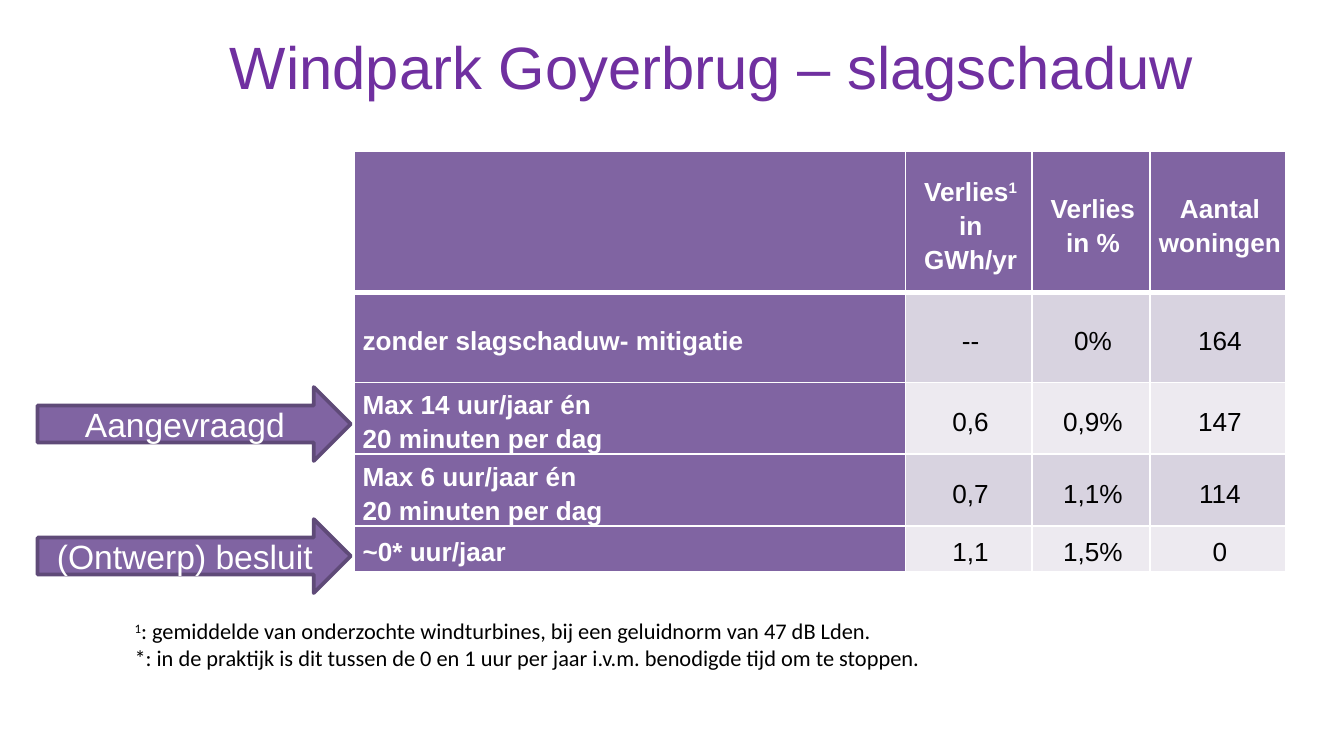
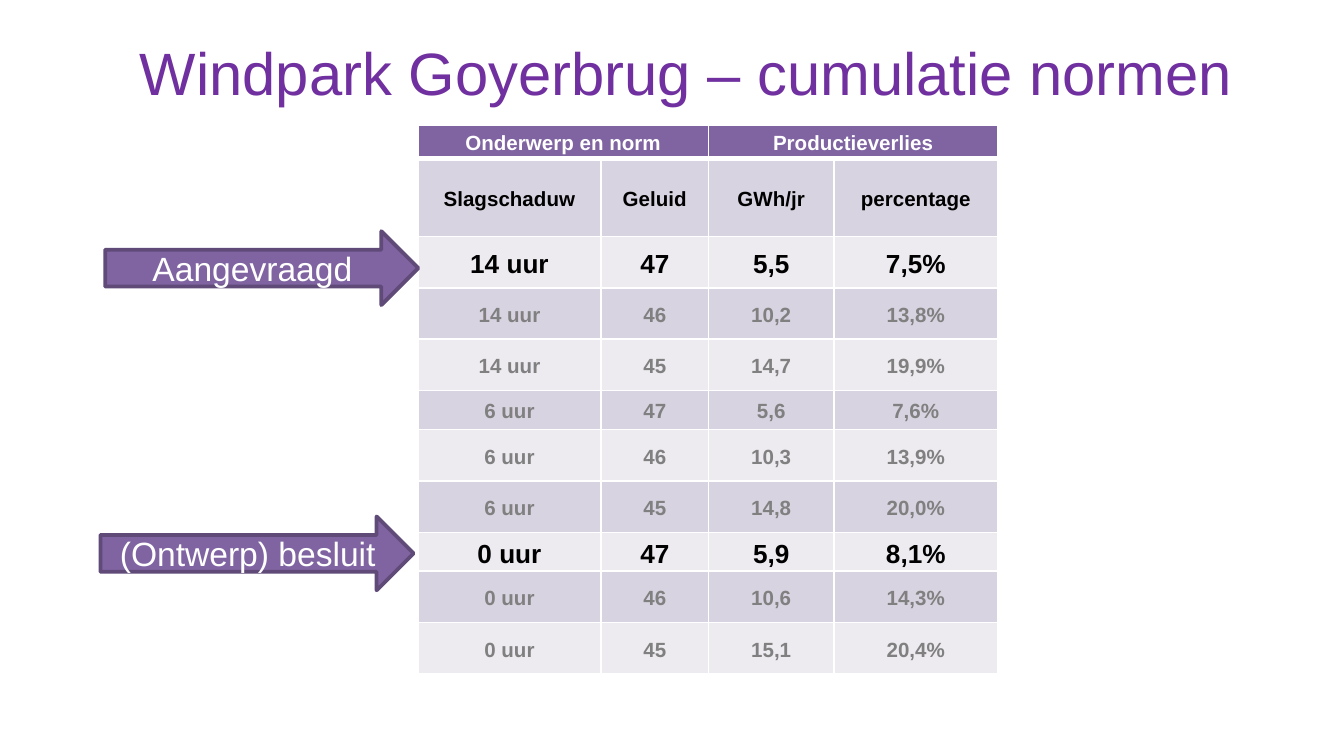
from lxml import etree
from pptx import Presentation
from pptx.dml.color import RGBColor
from pptx.enum.shapes import MSO_SHAPE
from pptx.enum.text import MSO_ANCHOR, MSO_AUTO_SIZE, PP_ALIGN
from pptx.oxml.ns import qn
from pptx.util import Pt

PX = 2286
ARROW = MSO_SHAPE.RIGHT_ARROW
MIDDLE = MSO_ANCHOR.MIDDLE
LEFT, CENTER = PP_ALIGN.LEFT, PP_ALIGN.CENTER
FIXED, GROW = MSO_AUTO_SIZE.NONE, MSO_AUTO_SIZE.SHAPE_TO_FIT_TEXT

TITLE = RGBColor(0x70, 0x30, 0xA0)
PURPLE = RGBColor(0x80, 0x64, 0xA2)
EDGE = RGBColor(0x5F, 0x4A, 0x78)
DARK = RGBColor(0xD8, 0xD3, 0xE0)
LIGHT = RGBColor(0xED, 0xEA, 0xF0)
WHITE = RGBColor(0xFF, 0xFF, 0xFF)
BLACK = RGBColor(0x00, 0x00, 0x00)
GRAY = RGBColor(0x80, 0x80, 0x80)


def write(par, text, size, color, bold=False, align=CENTER, face="Arial"):
    par.alignment = align
    for row, line in enumerate(text.split("\n")):
        if row:
            par.add_line_break()
        for spot, part in enumerate(line.split("^")):
            if part:
                run = par.add_run()
                run.text = part
                font = run.font
                font.name, font.size, font.bold = face, Pt(size), bold
                font.color.rgb = color
                if spot % 2:
                    run._r.get_or_add_rPr().set("baseline", "30000")


def dress(cell, row, fill, pads):
    props = cell._tc.get_or_add_tcPr()
    for side in "LRTB":
        thick = (row, side) in ((0, "B"), (1, "T"))
        line = etree.SubElement(props, qn("a:ln" + side), w=str(Pt(3 if thick else 1)))
        paint = etree.SubElement(line, qn("a:solidFill"))
        etree.SubElement(paint, qn("a:srgbClr"), val=str(WHITE))
    cell.fill.solid()
    cell.fill.fore_color.rgb = fill
    cell.vertical_anchor = MIDDLE
    cell.margin_left, cell.margin_top, cell.margin_right, cell.margin_bottom = [
        pad * PX for pad in pads]
    cell.text_frame.paragraphs[0].line_spacing = 1.15


deck = Presentation()
deck.slide_width, deck.slide_height = 4000 * PX, 2250 * PX

pages = [
    ("Windpark Goyerbrug – slagschaduw", (237, 56, 3764, 280),
     (1055, 451), (1640, 376, 352, 404), (420, 268, 212, 212, 136)),
    ("Windpark Goyerbrug – cumulatie normen", (320, 56, 3448, 316),
     (1244, 372), (545, 320, 373, 488),
     (100, 232, 153, 153, 153, 116, 153, 153, 116, 153, 153)),
]
slides, grids = [], []
for name, box, spot, cols, rows in pages:
    slide = deck.slides.add_slide(deck.slide_layouts[5])
    title = slide.shapes.title
    title.left, title.top, title.width, title.height = [n * PX for n in box]
    frame = title.text_frame
    frame.word_wrap, frame.auto_size = True, FIXED
    frame.vertical_anchor = MIDDLE
    write(frame.paragraphs[0], name, 32, TITLE)
    grid = slide.shapes.add_table(
        len(rows), len(cols), spot[0] * PX, spot[1] * PX,
        sum(cols) * PX, sum(rows) * PX).table
    for col, width in zip(grid.columns, cols):
        col.width = width * PX
    for row, height in zip(grid.rows, rows):
        row.height = height * PX
    slides.append(slide)
    grids.append(grid)

shade = [
    ("", "Verlies^1^ in GWh/yr", "Verlies in %", "Aantal woningen"),
    ("zonder slagschaduw- mitigatie", "--", "0%", "164"),
    ("Max 14 uur/jaar én\n20 minuten per dag", "0,6", "0,9%", "147"),
    ("Max 6 uur/jaar én\n20 minuten per dag", "0,7", "1,1%", "114"),
    ("~0* uur/jaar", "1,1", "1,5%", "0"),
]
for r, line in enumerate(shade):
    for c, text in enumerate(line):
        head = r == 0 or c == 0
        cell = grids[0].cell(r, c)
        dress(cell, r, PURPLE if head else DARK if r % 2 else LIGHT, (24, 12, 12, 0))
        write(cell.text_frame.paragraphs[0], text, 14, WHITE if head else BLACK,
              head, CENTER if c else LEFT)

norms = [
    ("Onderwerp en norm", "", "Productieverlies", ""),
    ("Slagschaduw", "Geluid", "GWh/jr", "percentage"),
    ("14 uur", "47", "5,5", "7,5%"),
    ("14 uur", "46", "10,2", "13,8%"),
    ("14 uur", "45", "14,7", "19,9%"),
    ("6 uur", "47", "5,6", "7,6%"),
    ("6 uur", "46", "10,3", "13,9%"),
    ("6 uur", "45", "14,8", "20,0%"),
    ("0 uur", "47", "5,9", "8,1%"),
    ("0 uur", "46", "10,6", "14,3%"),
    ("0 uur", "45", "15,1", "20,4%"),
]
chosen = (2, 8)
for r, line in enumerate(norms):
    fill = PURPLE if r == 0 else DARK if r % 2 else LIGHT
    color = WHITE if r == 0 else BLACK if r == 1 or r in chosen else GRAY
    for c, text in enumerate(line):
        cell = grids[1].cell(r, c)
        dress(cell, r, fill, (12, 0, 12, 0))
        par = cell.text_frame.paragraphs[0]
        par.space_after = Pt(8)
        write(par, text, 14 if r in chosen else 11, color, True)
for c in (0, 2):
    grids[1].cell(0, c).merge(grids[1].cell(0, c + 1))

note = slides[0].shapes.add_textbox(361 * PX, 1818 * PX, 3592 * PX, 200 * PX).text_frame
note.word_wrap, note.auto_size = True, GROW
write(note.paragraphs[0],
      "^1^: gemiddelde van onderzochte windturbines, bij een geluidnorm van 47 dB Lden.\n"
      "*: in de praktijk is dit tussen de 0 en 1 uur per jaar i.v.m. benodigde tijd om te stoppen.",
      12, BLACK, align=LEFT, face="Calibri")

arrows = [
    (0, 112, 1152, "Aangevraagd"),
    (0, 112, 1545, "(Ontwerp) besluit"),
    (1, 313, 688, "Aangevraagd"),
    (1, 299, 1537, "(Ontwerp) besluit"),
]
for page, x, y, text in arrows:
    arrow = slides[page].shapes.add_shape(ARROW, x * PX, y * PX, 932 * PX, 220 * PX)
    arrow.shadow.inherit = False
    arrow.fill.solid()
    arrow.fill.fore_color.rgb = PURPLE
    arrow.line.color.rgb = EDGE
    arrow.line.width = Pt(2)
    arrow.text_frame.vertical_anchor = MIDDLE
    write(arrow.text_frame.paragraphs[0], text, 18, WHITE)

deck.save("out.pptx")
